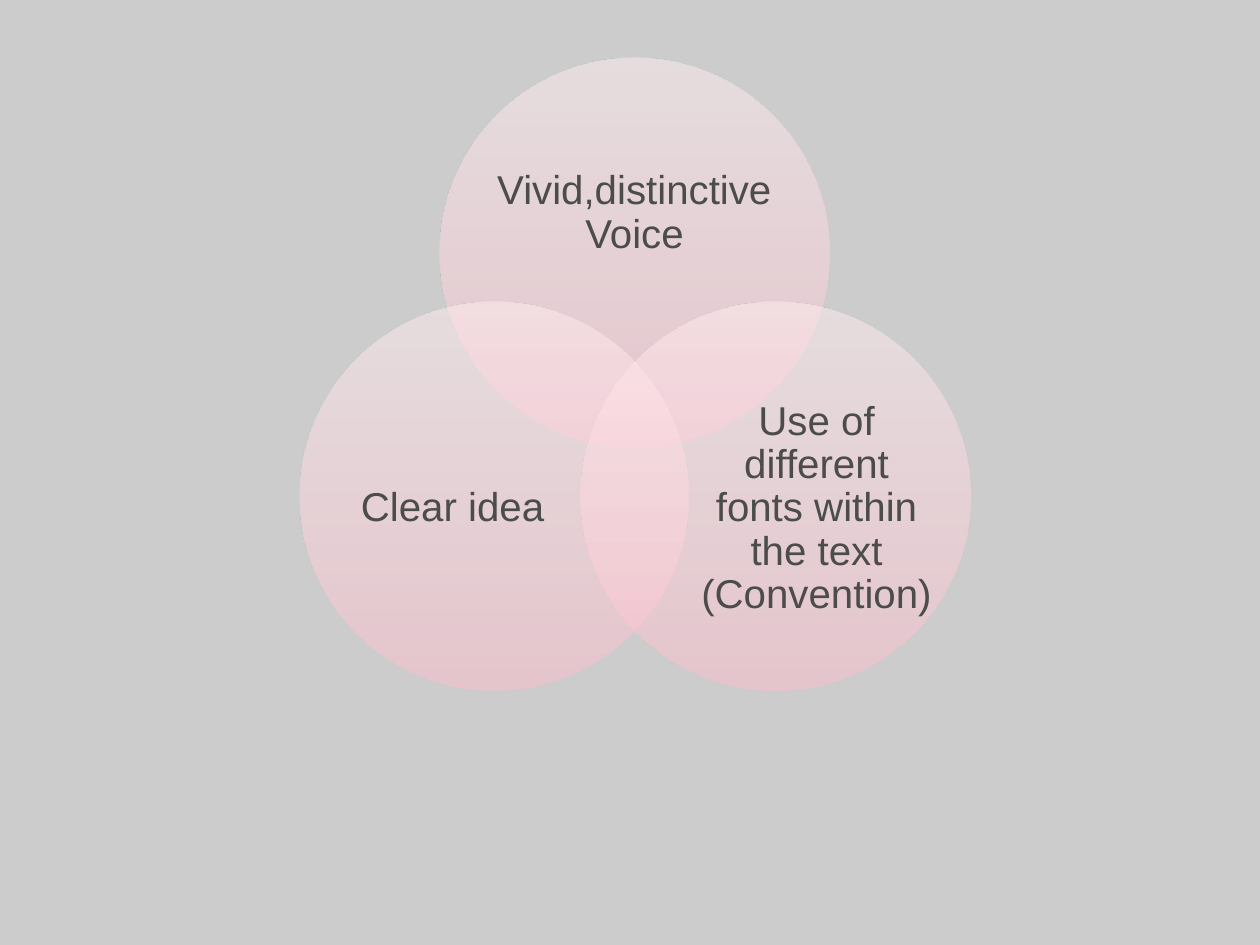
from lxml.etree import SubElement
from pptx import Presentation
from pptx.dml.color import RGBColor
from pptx.enum.shapes import MSO_SHAPE
from pptx.enum.text import MSO_ANCHOR, PP_ALIGN
from pptx.oxml.ns import qn
from pptx.util import Pt

COLORS = {
    "background": "CCCCCC",
    "text": "4C4C4C",
    "deep": "FFBDCD",
    "mid": "FFD1DB",
    "pale": "FFEEF1",
}
STOPS = [(0, "deep"), (35, "mid"), (100, "pale")]

# Circle offset and label box (left, top, width, height), in diameters
CIRCLES = [
    ("Vivid,distinctive Voice", (0, 0), (0.133, 0.175, 0.733, 0.45)),
    ("Use of different fonts within the text (Convention)",
     (0.361, 0.625), (0.306, 0.258, 0.6, 0.55)),
    ("Clear idea", (-0.361, 0.625), (0.094, 0.258, 0.6, 0.55)),
]


def fill_gradient(sp):
    """Three half-transparent stops, running from bottom to top."""
    sp.fill.gradient()
    grad = sp.fill._xPr.find(qn("a:gradFill"))
    stops = grad.find(qn("a:gsLst"))
    for gs in list(stops):
        stops.remove(gs)
    for pos, name in STOPS:
        gs = SubElement(stops, qn("a:gs"), pos=str(pos * 1000))
        color = SubElement(gs, qn("a:srgbClr"), val=COLORS[name])
        SubElement(color, qn("a:alpha"), val="50000")
    grad.find(qn("a:lin")).set("ang", "16200000")


def add_circle(shapes, x, y, d):
    sp = shapes.add_shape(MSO_SHAPE.OVAL, Pt(x), Pt(y), Pt(d), Pt(d))
    sp.shadow.inherit = False
    fill_gradient(sp)
    sp.line.fill.background()


def add_label(shapes, text, x, y, w, h):
    tf = shapes.add_textbox(Pt(x), Pt(y), Pt(w), Pt(h)).text_frame
    tf.word_wrap = True
    tf.vertical_anchor = MSO_ANCHOR.MIDDLE
    tf.margin_left = tf.margin_top = tf.margin_right = tf.margin_bottom = 0
    p = tf.paragraphs[0]
    p.alignment = PP_ALIGN.CENTER
    p.line_spacing = 0.9
    r = p.add_run()
    r.text = text
    r.font.name = "Arial"
    r.font.size = Pt(23)
    r.font.color.rgb = RGBColor.from_string(COLORS["text"])


def add_venn(s, center, top, height):
    """Three overlapping circles filling the height, centred on a line."""
    d = height / 1.625
    shapes = s.shapes.add_group_shape().shapes
    for text, (dx, dy), (lx, ly, lw, lh) in CIRCLES:
        x, y = center + (dx - 0.5) * d, top + dy * d
        add_circle(shapes, x, y, d)
        add_label(shapes, text, x + lx * d, y + ly * d, lw * d, lh * d)


def main():
    prs = Presentation()
    prs.slide_width, prs.slide_height = Pt(720), Pt(540)
    s = prs.slides.add_slide(prs.slide_layouts[6])

    # Background
    fill = s.background.fill
    fill.solid()
    fill.fore_color.rgb = RGBColor.from_string(COLORS["background"])

    # Venn diagram
    add_venn(s, center=362.7, top=33, height=361.8)
    prs.save("out.pptx")


if __name__ == "__main__":
    main()
